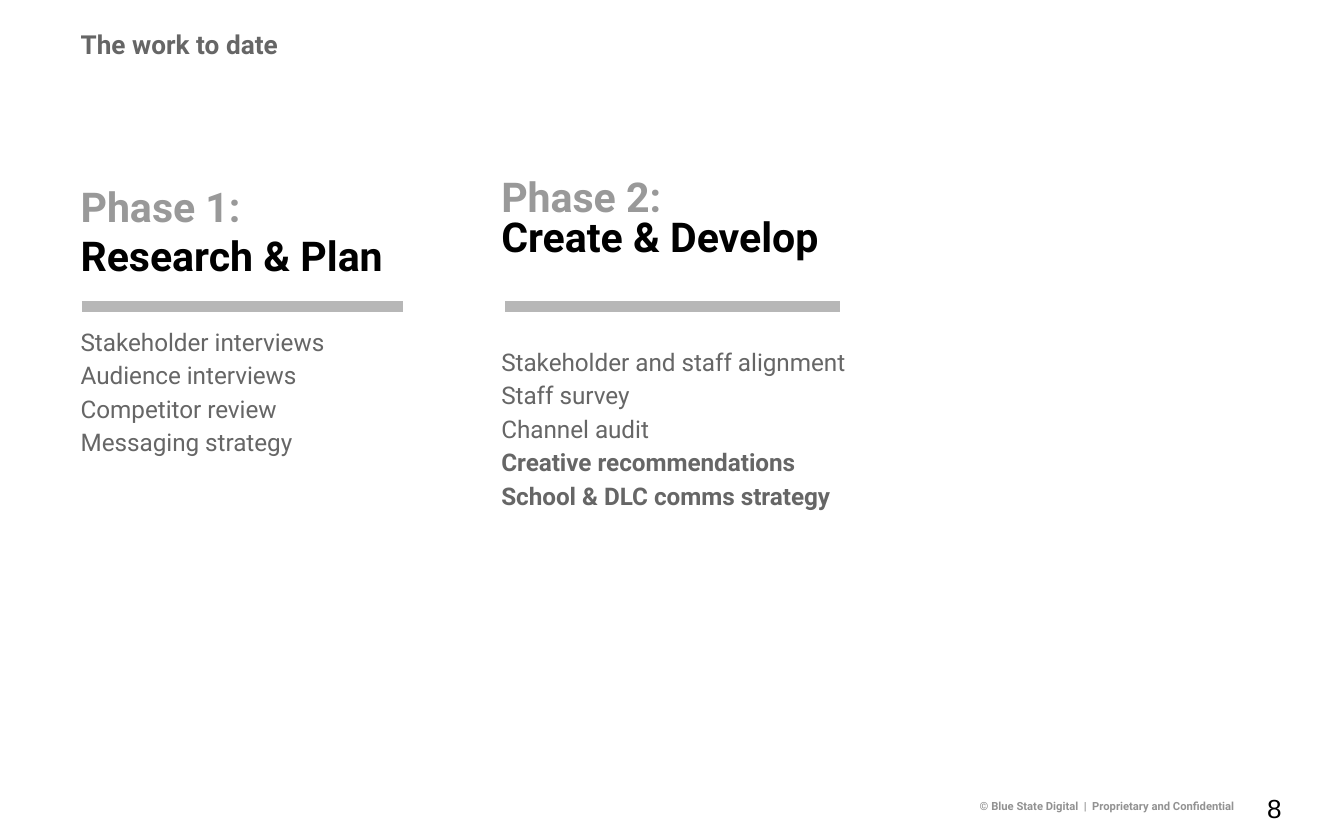
from lxml import etree
from pptx import Presentation
from pptx.dml.color import RGBColor
from pptx.enum.shapes import MSO_CONNECTOR
from pptx.enum.text import MSO_ANCHOR, MSO_AUTO_SIZE, PP_ALIGN
from pptx.oxml.ns import qn
from pptx.util import Inches, Pt

STRAIGHT = MSO_CONNECTOR.STRAIGHT
TOP, MIDDLE = MSO_ANCHOR.TOP, MSO_ANCHOR.MIDDLE
NO_FIT = MSO_AUTO_SIZE.NONE
LEFT = PP_ALIGN.LEFT
COLORS = {"text": "666666", "phase": "999999", "name": "000000",
          "rule": "B7B7B7", "footer": "929292"}

prs = Presentation()
prs.slide_width, prs.slide_height = Inches(10), Inches(6.25)
COL, ROW = prs.slide_width / 100, prs.slide_height / 100
s = prs.slides.add_slide(prs.slide_layouts[3])


def place(sp, x, y, w, h, inset=0.05, anchor=TOP):
    """Position a text shape on the 100 x 100 grid and return its frame."""
    sp.left, sp.top = round(x * COL), round(y * ROW)
    sp.width, sp.height = round(w * COL), round(h * ROW)
    tf = sp.text_frame
    tf.word_wrap, tf.auto_size, tf.vertical_anchor = True, NO_FIT, anchor
    tf.margin_left = tf.margin_right = Inches(inset)
    tf.margin_top = tf.margin_bottom = Inches(inset)
    return tf


def write(tf, text, size=13, color="text", bold=False, font="Roboto",
          spacing=1.0, after=0):
    """Fill the empty first paragraph, or append one, without a bullet."""
    p = tf.paragraphs[0] if not tf.text else tf.add_paragraph()
    pPr = p._p.get_or_add_pPr()
    pPr.set("marL", "0")
    pPr.set("indent", "0")
    etree.SubElement(pPr, qn("a:buNone"))
    p.alignment, p.line_spacing = LEFT, spacing
    p.space_before, p.space_after = Pt(0), Pt(after)
    r = p.add_run()
    r.text = text
    r.font.name, r.font.size, r.font.bold = font, Pt(size), bold
    r.font.color.rgb = RGBColor.from_string(COLORS[color])


tf = place(s.shapes.title, 5.5, 1.44, 89, 8.32, anchor=MIDDLE)
write(tf, "The work to date", size=14, bold=True, spacing=0.75)

# (left, width, rule start, rule end, heading spacing, gap, phase, name, items)
phases = [
    (5.5, 28.6, 6.1, 30, 1.0, 23, "Phase 1:", "Research & Plan",
     [("Stakeholder interviews", False), ("Audience interviews", False),
      ("Competitor review", False), ("Messaging strategy", False)]),
    (36.8, 30.4, 37.6, 62.5, 0.8, 44, "Phase 2:", "Create & Develop",
     [("Stakeholder and staff alignment", False), ("Staff survey", False),
      ("Channel audit", False), ("Creative recommendations", True),
      ("School & DLC comms strategy", True)]),
]
bodies = list(s.placeholders)[1:]
for body, (x, w, start, end, spacing, gap, phase, name, items) in zip(bodies, phases):
    tf = place(body, x, 20.8, w, 70)
    write(tf, phase, size=22, color="phase", bold=True, spacing=spacing)
    write(tf, name, size=22, color="name", bold=True, spacing=spacing, after=gap)
    for item, bold in items:
        write(tf, item, bold=bold, spacing=1.15)

    y = round(36.5 * ROW)
    rule = s.shapes.add_connector(STRAIGHT, round(start * COL), y, round(end * COL), y)
    rule.line.color.rgb = RGBColor.from_string(COLORS["rule"])
    rule.line.width = Pt(6)
    etree.SubElement(rule._element.spPr, qn("a:effectLst"))

tf = place(s.shapes.add_textbox(0, 0, 0, 0), 72.6, 94.9, 20.8, 2.4, inset=0.03, anchor=MIDDLE)
write(tf, "© Blue State Digital  |  Proprietary and Confidential",
      size=6, color="footer", bold=True, spacing=0.8)

tf = place(s.shapes.add_textbox(0, 0, 0, 0), 93.3, 92.3, 3.5, 7.7, inset=0.1, anchor=MIDDLE)
write(tf, "8", size=14, color="name", font="Arial")

prs.save("out.pptx")
